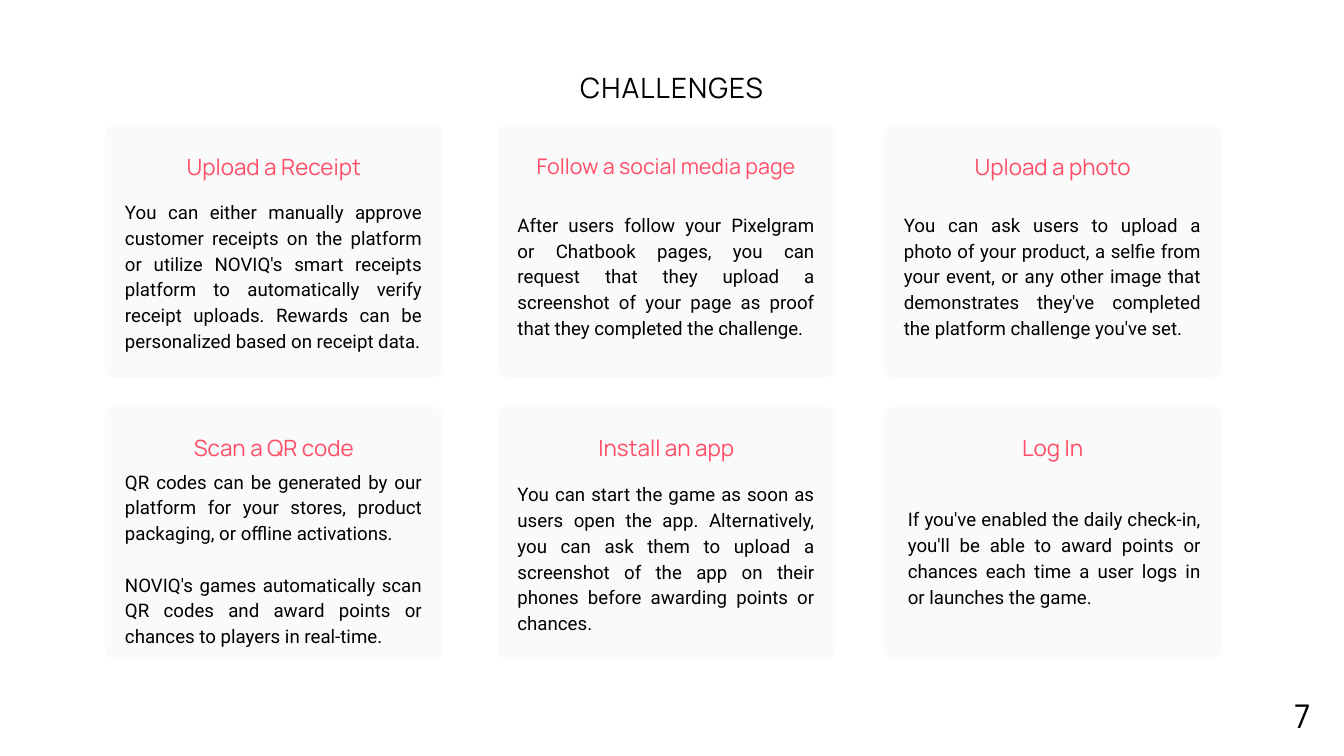
from pptx import Presentation
from pptx.dml.color import RGBColor
from pptx.enum.shapes import MSO_SHAPE as Shape
from pptx.enum.text import PP_ALIGN as Align
from pptx.util import Inches, Pt

BLACK = RGBColor(0x00, 0x00, 0x00)
CORAL = RGBColor(0xFF, 0x4D, 0x67)
MIST = RGBColor(0xFA, 0xFA, 0xFA)

COLUMNS, ROWS = 20, 11.25
CARD_LEFTS = (1.56, 7.4, 13.15)
CARD_TOP, CARD_STEP = 1.87, 4.18
CARD_WIDTH, CARD_HEIGHT = 5.03, 3.75
HEADING_DROP, MARGIN = 0.41, 0.3

CHALLENGES = [
    ("Upload a Receipt", 24, 1.07, 0, [
        "You can either manually approve customer receipts on the platform or utilize "
        "NOVIQ's smart receipts platform to automatically verify receipt uploads. "
        "Rewards can be personalized based on receipt data."]),
    ("Follow a social media page", 23, 1.26, 0, [
        "After users follow your Pixelgram or Chatbook pages, you can request that they "
        "upload a screenshot of your page as proof that they completed the challenge."]),
    ("Upload a photo", 24, 1.26, 0, [
        "You can ask users to upload a photo of your product, a selfie from your event, "
        "or any other image that demonstrates they've completed the platform challenge "
        "you've set."]),
    ("Scan a QR code", 24, 0.9, 0, [
        "QR codes can be generated by our platform for your stores, product packaging, "
        "or offline activations.",
        "NOVIQ's games automatically scan QR codes and award points or chances to "
        "players in real-time."]),
    ("Install an app", 24, 1.09, 0, [
        "You can start the game as soon as users open the app. Alternatively, you can "
        "ask them to upload a screenshot of the app on their phones before awarding "
        "points or chances."]),
    ("Log In", 24, 1.46, 0.06, [
        "If you've enabled the daily check-in, you'll be able to award points or chances "
        "each time a user logs in or launches the game."]),
]


class Deck:
    heading_font = "Manrope"
    body_font = "Roboto"

    def __init__(self):
        self.prs = Presentation()
        self.prs.slide_width = Inches(COLUMNS)
        self.prs.slide_height = Inches(ROWS)
        self.slide = self.prs.slides.add_slide(self.prs.slide_layouts[6])

    def place(self, left, top, width, height):
        column = self.prs.slide_width / COLUMNS
        row = self.prs.slide_height / ROWS
        return (round(left * column), round(top * row),
                round(width * column), round(height * row))

    def panel(self, *area):
        panel = self.slide.shapes.add_shape(Shape.ROUNDED_RECTANGLE, *self.place(*area))
        panel.adjustments[0] = 0.04
        panel.shadow.inherit = False
        panel.fill.solid()
        panel.fill.fore_color.rgb = MIST
        panel.line.fill.background()

    def text(self, area, paragraphs, font, size, leading, color=BLACK,
             align=Align.CENTER, gap=0, tracking=0):
        frame = self.slide.shapes.add_textbox(*self.place(*area)).text_frame
        frame.word_wrap = True
        frame.margin_left = frame.margin_right = 0
        frame.margin_top = frame.margin_bottom = 0
        frame.text = "\n".join(paragraphs)
        for index, paragraph in enumerate(frame.paragraphs):
            paragraph.alignment = align
            paragraph.line_spacing = Pt(leading)
            paragraph.space_before = Pt(gap if index else 0)
            for run in paragraph.runs:
                run.font.name = font
                run.font.size = Pt(size)
                run.font.color.rgb = color
                if tracking:
                    run.font._element.set("spc", str(round(tracking * 100)))

    def heading(self, area, words, size, leading, **style):
        self.text(area, [words], self.heading_font, size, leading, **style)

    def body(self, area, paragraphs):
        self.text(area, paragraphs, self.body_font, 20, 27.6,
                  align=Align.JUSTIFY, gap=27.6)

    def card(self, left, top, title, title_size, body_drop, indent, paragraphs):
        self.panel(left, top, CARD_WIDTH, CARD_HEIGHT)
        self.heading((left, top + HEADING_DROP, CARD_WIDTH, 0.42), title,
                     title_size, title_size * 1.2, color=CORAL)
        body_width = 4.42 - indent
        self.body((left + MARGIN + indent, top + body_drop, body_width,
                   CARD_HEIGHT - body_drop), paragraphs)


def main():
    deck = Deck()
    for index, challenge in enumerate(CHALLENGES):
        row, column = divmod(index, len(CARD_LEFTS))
        deck.card(CARD_LEFTS[column], CARD_TOP + row * CARD_STEP, *challenge)
    deck.heading((19.26, 10.02, 0.3, 0.87), "7", 35, 66.5, align=Align.LEFT)
    deck.heading((8.58, 0.96, 2.83, 0.59), "CHALLENGES", 30, 42, tracking=1.2)
    deck.prs.save("out.pptx")


if __name__ == "__main__":
    main()
